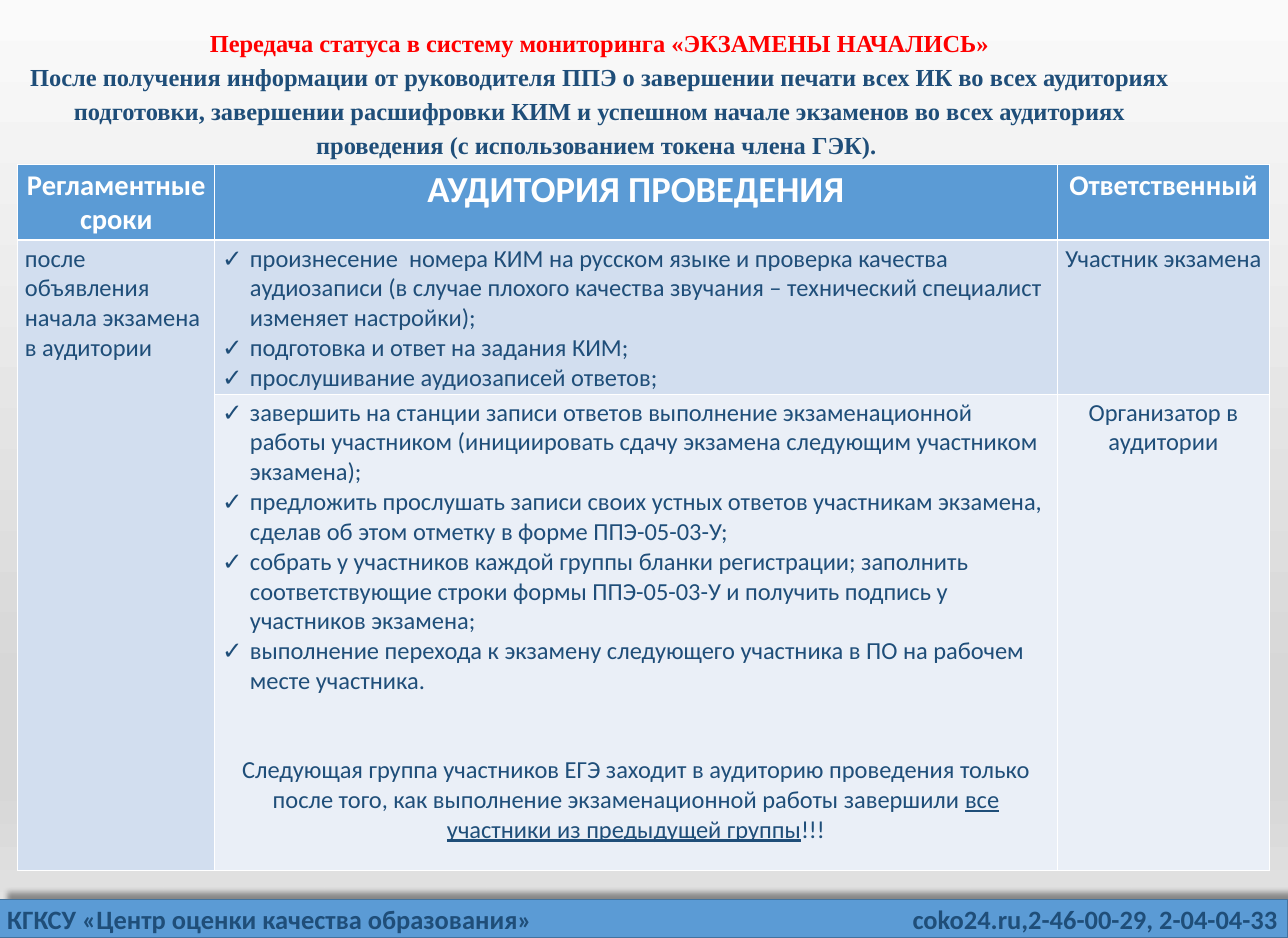
import pptx
import pptx.util
import pptx.dml.color
import pptx.enum.shapes
import pptx.enum.text
import pptx.oxml.ns
import lxml.etree

Inches, Pt = pptx.util.Inches, pptx.util.Pt
RGBColor = pptx.dml.color.RGBColor
qn = pptx.oxml.ns.qn
CENTER = pptx.enum.text.PP_ALIGN.CENTER
LEFT = pptx.enum.text.PP_ALIGN.LEFT

WHITE = RGBColor(0xFF, 0xFF, 0xFF)
RED = RGBColor(0xFF, 0x00, 0x00)
NAVY = RGBColor(0x1F, 0x4E, 0x79)
BLUE = RGBColor(0x5B, 0x9B, 0xD5)
BAR_EDGE = RGBColor(0x43, 0x73, 0x9E)
BAND_DARK = RGBColor(0xD2, 0xDE, 0xEF)
BAND_LIGHT = RGBColor(0xEA, 0xEF, 0xF7)
BACKDROP = [(0, "FAFAFA"), (74, "D7D7D7"), (83, "D7D7D7"), (100, "E4E4E4")]


def add_node(parent, tag, **attributes):
    return lxml.etree.SubElement(parent, qn(tag), {k: str(v) for k, v in attributes.items()})


def style(para, size, color, bold=False, name="Calibri", align=LEFT):
    para.alignment = align
    for span in para.runs:
        span.font.size = Pt(size)
        span.font.name = name
        span.font.bold = bold
        span.font.color.rgb = color


deck = pptx.Presentation()
deck.slide_width, deck.slide_height = Inches(17.57), Inches(12.79)
page = deck.slides.add_slide(deck.slide_layouts[6])

# Background gradient, top to bottom
backdrop = page.background.fill
backdrop.gradient()
backdrop.gradient_angle = 270
stops = page.element.find(".//" + qn("a:gsLst"))
for stop in list(stops):
    stops.remove(stop)
for position, tint in BACKDROP:
    add_node(add_node(stops, "a:gs", pos=position * 1000), "a:srgbClr", val=tint)

# Footer bar with its shadow
bar = page.shapes.add_shape(pptx.enum.shapes.MSO_SHAPE.RECTANGLE,
                            0, Inches(12.26), Inches(17.57), Inches(0.53))
bar.fill.solid()
bar.fill.fore_color.rgb = BLUE
bar.line.color.rgb = BAR_EDGE
bar.line.width = Pt(1)
bar.shadow.inherit = False
effects = bar.element.spPr.find(qn("a:effectLst"))
shadow = add_node(effects, "a:outerShdw", blurRad=Pt(4), dist=Pt(10),
                  dir=315 * 60000, algn="bl", rotWithShape=0)
add_node(add_node(shadow, "a:srgbClr", val="000000"), "a:alpha", val=40000)

# Footer texts
for left, width, text in [(0, 7.44, "КГКСУ «Центр оценки качества образования»"),
                          (12.35, 5.22, "coko24.ru,2-46-00-29, 2-04-04-33")]:
    box = page.shapes.add_textbox(Inches(left), Inches(12.26), Inches(width), Inches(0.54))
    box.text_frame.word_wrap = False
    box.text_frame.text = text
    style(box.text_frame.paragraphs[0], 26, NAVY, bold=True)

# Table grid
table = page.shapes.add_table(3, 3, Inches(0.24), Inches(2.24),
                              Inches(17.08), Inches(9.58)).table
for column, width in zip(table.columns, [2.69, 11.49, 2.9]):
    column.width = Inches(width)
for row, height in zip(table.rows, [1, 2.08, 6.5]):
    row.height = Inches(height)

# Cell borders and fills
for r, row in enumerate(table.rows):
    for c, cell in enumerate(row.cells):
        properties = cell._tc.get_or_add_tcPr()
        for side in "LRTB":
            thick = (r, side) in [(0, "B"), (1, "T")]
            line = add_node(properties, "a:ln" + side, w=Pt(3 if thick else 1))
            add_node(add_node(line, "a:solidFill"), "a:srgbClr", val=WHITE)
        cell.fill.solid()
        cell.fill.fore_color.rgb = BAND_DARK if r and c == 0 else [BLUE, BAND_DARK, BAND_LIGHT][r]
table.cell(1, 0).merge(table.cell(2, 0))

# Header row and side columns
plain_cells = [
    (0, 0, "Регламентные сроки", 28, CENTER),
    (0, 1, "АУДИТОРИЯ ПРОВЕДЕНИЯ", 36, CENTER),
    (0, 2, "Ответственный", 28, CENTER),
    (1, 0, "после объявления начала экзамена в аудитории", 24, LEFT),
    (1, 2, "Участник экзамена", 24, CENTER),
    (2, 2, "Организатор в аудитории", 24, CENTER),
]
for r, c, text, size, align in plain_cells:
    frame = table.cell(r, c).text_frame
    frame.text = text
    style(frame.paragraphs[0], size, NAVY if r else WHITE, bold=r == 0, align=align)

# Check lists in the middle column
check_lists = {
    1: ["произнесение  номера КИМ на русском языке и проверка качества аудиозаписи "
        "(в случае плохого качества звучания – технический специалист изменяет настройки);",
        "подготовка и ответ на задания КИМ;",
        "прослушивание аудиозаписей ответов;"],
    2: ["завершить на станции записи ответов выполнение экзаменационной работы участником "
        "(инициировать сдачу экзамена следующим участником экзамена);",
        "предложить прослушать записи своих устных ответов участникам экзамена, "
        "сделав об этом отметку в форме ППЭ-05-03-У;",
        "собрать у участников каждой группы бланки регистрации; заполнить соответствующие "
        "строки формы ППЭ-05-03-У и получить подпись у участников экзамена;",
        "выполнение перехода к экзамену следующего участника в ПО на рабочем месте участника."],
}
for r, items in check_lists.items():
    frame = table.cell(r, 1).text_frame
    frame.text = "\n".join(items)
    for para in frame.paragraphs:
        settings = para._p.get_or_add_pPr()
        settings.set("marL", str(Inches(0.38)))
        settings.set("indent", str(-Inches(0.38)))
        add_node(settings, "a:buFont", typeface="Calibri")
        add_node(settings, "a:buChar", char="✓")
        style(para, 24, NAVY)

# Closing remark under the second list
remark = table.cell(2, 1).text_frame.add_paragraph()
for text in ["Следующая группа участников ЕГЭ заходит в аудиторию проведения только после того, "
             "как выполнение экзаменационной работы завершили ",
             "все участники из предыдущей группы", "!!!"]:
    remark.add_run().text = text
remark.space_before = Pt(58)
style(remark, 24, NAVY, align=CENTER)
remark.runs[1].font.underline = True

# Title
title = page.shapes.add_textbox(Inches(0.12), Inches(0.28), Inches(16.11), Inches(1.96))
title.text_frame.word_wrap = True
title.text_frame.text = (
    "Передача статуса в систему мониторинга «ЭКЗАМЕНЫ НАЧАЛИСЬ»\n"
    "После получения информации от руководителя ППЭ о завершении печати всех ИК во всех "
    "аудиториях подготовки, завершении расшифровки КИМ и успешном начале экзаменов во всех "
    "аудиториях проведения (с использованием токена члена ГЭК). ")
for para, color in zip(title.text_frame.paragraphs, [RED, NAVY]):
    para.line_spacing = 1.15
    style(para, 24, color, bold=True, name="Times New Roman", align=CENTER)

deck.save("out.pptx")
